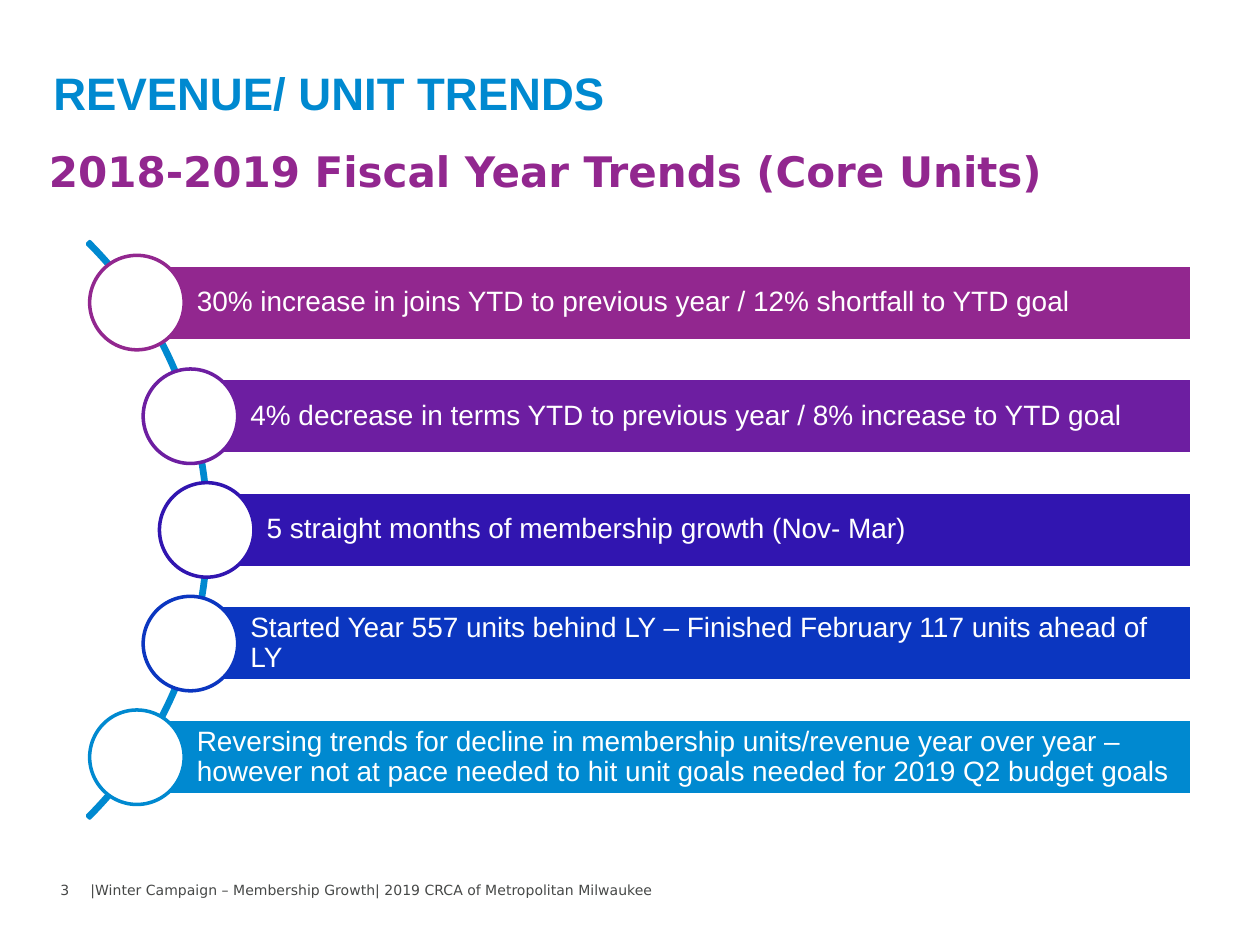
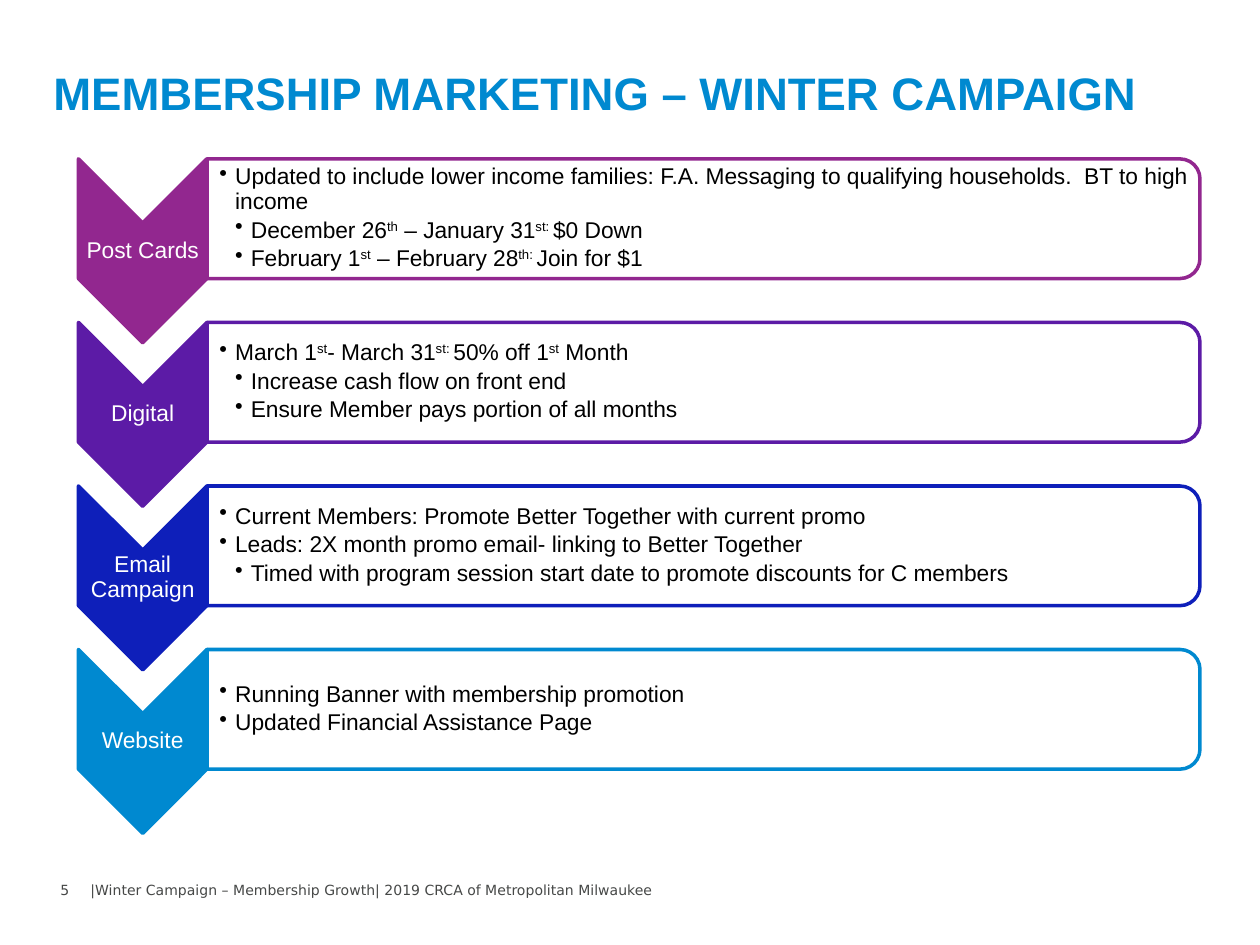
from dataclasses import dataclass
from math import sqrt

from lxml import etree
from pptx import Presentation
from pptx.dml.color import RGBColor
from pptx.enum import shapes, text
from pptx.oxml import ns
from pptx.util import Pt


@dataclass(frozen=True)
class Theme:
    sans: str = "Arial"
    display: str = "DejaVu Sans"
    blue: str = "0089D0"
    purple: str = "92278F"
    grey: str = "464847"
    white: str = "FFFFFF"
    black: str = "000000"
    trend_colours: tuple = ("92278F", "6D1EA1", "3115B0", "0B36C0", "0089D0")
    channel_colours: tuple = ("92278F", "5C1BA6", "0E1FBA", "0089D0")
    title_size: float = 26
    subtitle_size: float = 24
    trend_size: float = 16
    channel_size: float = 13
    footer_size: float = 8
    outline: float = 2


theme = Theme()
MIDDLE = text.MSO_ANCHOR.MIDDLE
KIND = shapes.MSO_SHAPE


def add_shape(slide, kind, box, fill, line, turned=False):
    """Place a preset in its visible box (left, top, width, height), optionally turned by 90 degrees."""
    left, top, width, height = box
    if turned:
        left, top = left + (width - height) / 2, top + (height - width) / 2
        width, height = height, width
    shape = slide.shapes.add_shape(kind, Pt(left), Pt(top), Pt(width), Pt(height))
    shape.rotation = 90 if turned else 0
    shape.shadow.inherit = False
    if fill:
        shape.fill.solid()
        shape.fill.fore_color.rgb = RGBColor.from_string(fill)
    else:
        shape.fill.background()
    shape.line.color.rgb = RGBColor.from_string(line)
    shape.line.width = Pt(theme.outline)
    return shape


def write(shape, lines, size, colour, font=theme.sans, bold=False, insets=(7.2, 3.6, 7.2, 3.6),
          anchor=text.MSO_ANCHOR.TOP, align=text.PP_ALIGN.LEFT, spacing=None):
    """Write (level, words) lines; level 0 has no bullet and ^...^ marks superscript."""
    frame = shape.text_frame
    frame.word_wrap = True
    frame.vertical_anchor = anchor
    frame.margin_left, frame.margin_top, frame.margin_right, frame.margin_bottom = map(Pt, insets)
    for index, (level, words) in enumerate(lines):
        paragraph = frame.add_paragraph() if index else frame.paragraphs[0]
        paragraph.alignment = align
        paragraph.line_spacing = spacing
        if level:
            paragraph.level = level
            paragraph.space_after = Pt(2.25)
            properties = paragraph._p.get_or_add_pPr()
            properties.set("marL", str(Pt(9 * level)))
            properties.set("indent", str(Pt(-9)))
            etree.SubElement(properties, ns.qn("a:buChar")).set("char", "•")
        paragraph.font.name = font
        paragraph.font.size = Pt(size)
        paragraph.font.bold = bold
        paragraph.font.color.rgb = RGBColor.from_string(colour)
        for part, piece in enumerate(words.split("^")):
            run = paragraph.add_run()
            run.text = piece
            if part % 2:
                run._r.get_or_add_rPr().set("baseline", "30000")


deck = Presentation()
deck.slide_width, deck.slide_height = Pt(720), Pt(540)

# Title and footer on both slides
pages = []
for heading, number in (("REVENUE/ UNIT TRENDS", "3"),
                        ("MEMBERSHIP MARKETING – WINTER CAMPAIGN", "5")):
    page = deck.slides.add_slide(deck.slide_layouts[6])
    pages.append(page)
    title = page.shapes.add_textbox(Pt(24.5), Pt(30.2), Pt(659.5), Pt(66.2))
    write(title, [(0, heading)], theme.title_size, theme.blue, bold=True, insets=(6, 7, 6, 3.6))
    for left, width, words in (
            (44.6, 639.4, "|Winter Campaign – Membership Growth| 2019 CRCA of Metropolitan Milwaukee"),
            (27.4, 32.4, number)):
        footer = page.shapes.add_textbox(Pt(left), Pt(500.4), Pt(width), Pt(20))
        write(footer, [(0, words)], theme.footer_size, theme.grey, theme.display)
trends_page, campaign_page = pages

# Trends: subtitle
subtitle = trends_page.shapes.add_textbox(Pt(20.9), Pt(77), Pt(622.8), Pt(94.3))
write(subtitle, [(0, "2018-2019 Fiscal Year Trends (Core Units)")], theme.subtitle_size,
      theme.purple, theme.display, bold=True, insets=(7.2, 6.4, 7.2, 3.6))

# Trends: arc that the circles sit on
arc_x, arc_y, arc_radius = -113.4, 302.8, 232.9
arc = add_shape(trends_page, KIND.BLOCK_ARC,
                (arc_x - arc_radius, arc_y - arc_radius, 2 * arc_radius, 2 * arc_radius),
                None, theme.blue)
for index, setting in enumerate((189, 27, 0.004)):
    arc.adjustments[index] = setting

# Trends: one bar and one circle a row
trends = (
    "30% increase in joins YTD to previous year / 12% shortfall to YTD goal",
    "4% decrease in terms YTD to previous year / 8% increase to YTD goal",
    "5 straight months of membership growth (Nov- Mar)",
    "Started Year 557 units behind LY – Finished February 117 units ahead of LY",
    "Reversing trends for decline in membership units/revenue year over year – "
    "however not at pace needed to hit unit goals needed for 2019 Q2 budget goals",
)
trend_pitch, bar_height, bar_right, circle_size, circle_radius = 64.95, 43.2, 680.8, 54, 231.5
for row, (trend, colour) in enumerate(zip(trends, theme.trend_colours)):
    offset = (row - 2) * trend_pitch
    x = arc_x + sqrt(circle_radius ** 2 - offset ** 2)
    y = arc_y + offset
    bar = add_shape(trends_page, KIND.RECTANGLE,
                    (x, y - bar_height / 2, bar_right - x, bar_height), colour, theme.white)
    write(bar, [(0, trend)], theme.trend_size, theme.white, insets=(34.3, 2.9, 2.9, 2.9),
          anchor=MIDDLE, spacing=0.9)
    add_shape(trends_page, KIND.OVAL,
              (x - circle_size / 2, y - circle_size / 2, circle_size, circle_size),
              theme.white, colour)

# Campaign: one chevron and one detail box a channel
channels = (
    ("Post Cards", [
        (1, "Updated to include lower income families: F.A. Messaging to qualifying households.  "
            "BT to high income"),
        (2, "December 26^th^ – January 31^st: ^$0 Down"),
        (2, "February 1^st^ – February 28^th: ^Join for $1")]),
    ("Digital", [
        (1, "March 1^st^- March 31^st: ^50% off 1^st^ Month"),
        (2, "Increase cash flow on front end"),
        (2, "Ensure Member pays portion of all months")]),
    ("Email Campaign", [
        (1, "Current Members: Promote Better Together with current promo"),
        (1, "Leads: 2X month promo email- linking to Better Together"),
        (2, "Timed with program session start date to promote discounts for C members")]),
    ("Website", [
        (1, "Running Banner with membership promotion"),
        (1, "Updated Financial Assistance Page")]),
)
channel_top, channel_pitch = 90.8, 93.45
chevron_left, chevron_width, detail_left = 44.8, 73.4, 118.3
for row, ((channel, details), colour) in enumerate(zip(channels, theme.channel_colours)):
    top = channel_top + row * channel_pitch
    add_shape(campaign_page, KIND.CHEVRON, (chevron_left, top, chevron_width, 105.1),
              colour, colour, turned=True)
    label = campaign_page.shapes.add_textbox(Pt(chevron_left), Pt(top + 36.7),
                                             Pt(chevron_width), Pt(31.7))
    write(label, [(0, channel)], theme.channel_size, theme.white, insets=(0.7,) * 4,
          anchor=MIDDLE, align=text.PP_ALIGN.CENTER, spacing=0.9)
    add_shape(campaign_page, KIND.ROUND_2_SAME_RECTANGLE, (detail_left, top, 567.4, 68.4),
              theme.white, colour, turned=True)
    detail = campaign_page.shapes.add_textbox(Pt(detail_left), Pt(top + 3.4), Pt(563.8), Pt(61.2))
    write(detail, details, theme.channel_size, theme.black, insets=(7.2, 0.7, 0.7, 0.7),
          anchor=MIDDLE, spacing=0.9)

deck.save("out.pptx")
